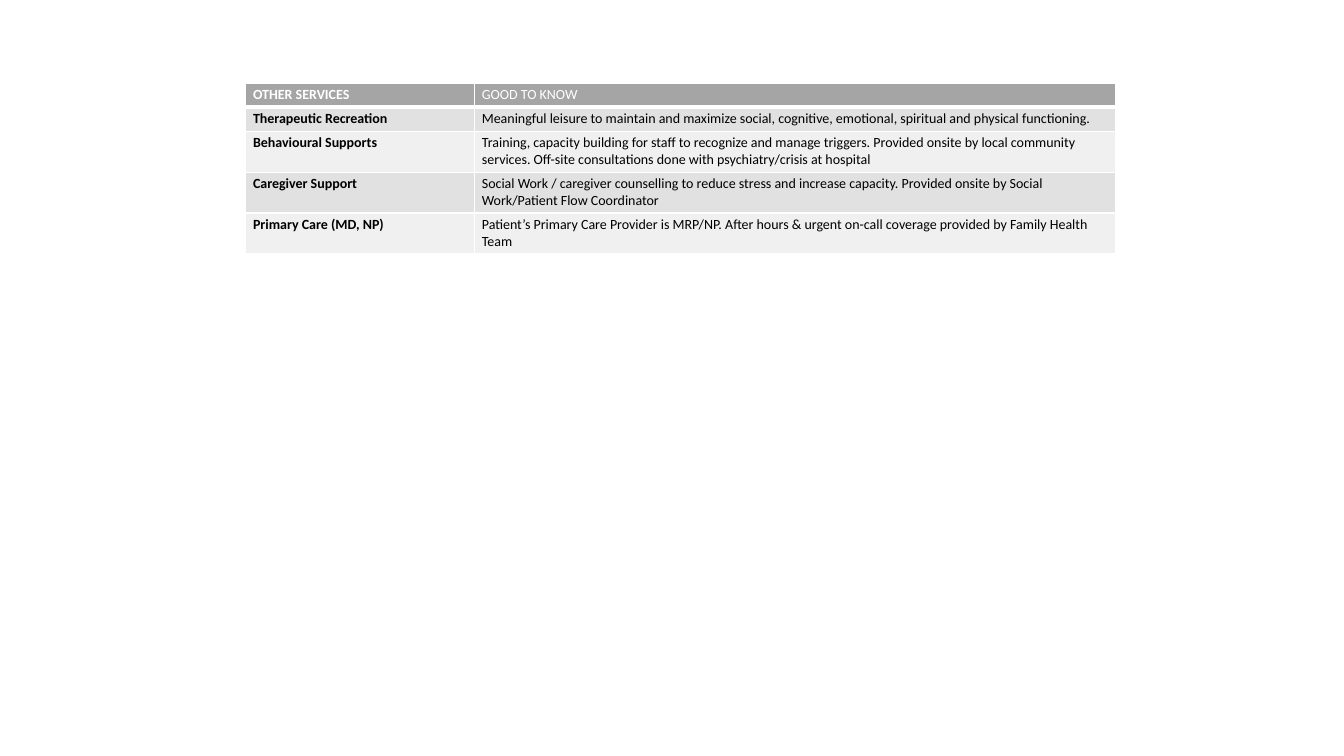
from lxml import etree
from pptx import Presentation
from pptx import util as u
from pptx.dml.color import RGBColor
from pptx.oxml.ns import qn

PX = 9525
WHITE = RGBColor(0xFF, 0xFF, 0xFF)
BLACK = RGBColor(0x00, 0x00, 0x00)
HEAD = RGBColor(0xA5, 0xA5, 0xA5)
BANDS = [RGBColor(0xF0, 0xF0, 0xF0), RGBColor(0xE1, 0xE1, 0xE1)]

COLS = [218, 611]
ROWS = [23, 23, 39, 39, 39]
CARE = [
    ("OTHER SERVICES", "GOOD TO KNOW"),
    ("Therapeutic Recreation",
     "Meaningful leisure to maintain and maximize social, cognitive, emotional, "
     "spiritual and physical functioning."),
    ("Behavioural Supports",
     "Training, capacity building for staff to recognize and manage triggers. "
     "Provided onsite by local community services. Off-site consultations done "
     "with psychiatry/crisis at hospital"),
    ("Caregiver Support",
     "Social Work / caregiver counselling to reduce stress and increase capacity. "
     "Provided onsite by Social Work/Patient Flow Coordinator"),
    ("Primary Care (MD, NP)",
     "Patient’s Primary Care Provider is MRP/NP. After hours & urgent on-call "
     "coverage provided by Family Health Team"),
]


def px(n):
    return u.Emu(n * PX)


def edge(cell, side, width):
    line = etree.SubElement(cell._tc.get_or_add_tcPr(), qn("a:" + side),
                            w=str(u.Pt(width)))
    fill = etree.SubElement(line, qn("a:solidFill"))
    etree.SubElement(fill, qn("a:srgbClr"), val=str(WHITE))


def style(cell, words, row, col):
    widths = {"lnL": 1, "lnR": 1,
              "lnT": 3 if row == 1 else 1,
              "lnB": 3 if row == 0 else 1}
    for side, width in widths.items():
        edge(cell, side, width)
    cell.fill.solid()
    cell.fill.fore_color.rgb = BANDS[row % 2] if row else HEAD
    cell.margin_left = cell.margin_right = px(7)
    cell.margin_top = cell.margin_bottom = px(3)
    cell.text_frame.text = words
    font = cell.text_frame.paragraphs[0].runs[0].font
    font.name = "Calibri"
    font.size = u.Pt(10)
    font.bold = col == 0
    font.color.rgb = BLACK if row else WHITE


def add_care(slide, left, top):
    frame = slide.shapes.add_table(len(ROWS), len(COLS), px(left), px(top),
                                   px(sum(COLS)), px(sum(ROWS)))
    table = frame.table
    for col, width in zip(table.columns, COLS):
        col.width = px(width)
    for row, height in zip(table.rows, ROWS):
        row.height = px(height)
    for row, pair in enumerate(CARE):
        for col, words in enumerate(pair):
            style(table.cell(row, col), words, row, col)


def main():
    deck = Presentation()
    deck.slide_width, deck.slide_height = px(1280), px(720)
    slide = deck.slides.add_slide(deck.slide_layouts[6])
    add_care(slide, 234, 79)
    deck.save("out.pptx")


if __name__ == "__main__":
    main()
